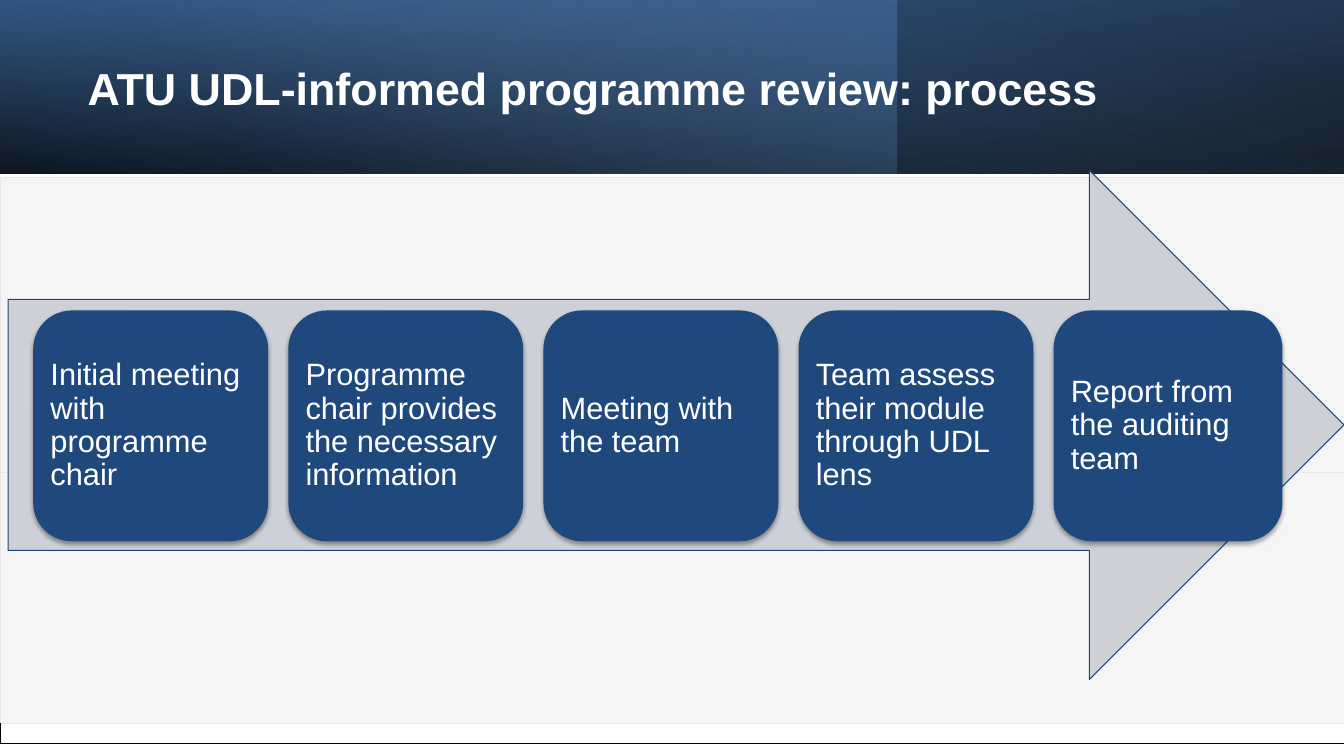
from dataclasses import dataclass

from lxml.etree import SubElement
from pptx import Presentation
from pptx.dml.color import RGBColor
from pptx.enum.shapes import MSO_SHAPE as Preset
from pptx.enum.text import MSO_ANCHOR as Anchor
from pptx.oxml import parse_xml
from pptx.oxml.ns import nsdecls, qn
from pptx.shapes.autoshape import Shape
from pptx.slide import Slide
from pptx.table import _Cell as Cell
from pptx.text.text import TextFrame
from pptx.util import Inches, Pt


@dataclass(frozen=True)
class Theme:
    font: str = "Arial"
    title_size: int = 32
    card_size: int = 22
    empty_cell_size: int = 8
    white: str = "FFFFFF"
    card: str = "1F497D"
    arrow: str = "CDD0D7"
    arrow_line: str = "1C477D"
    panel: str = "F5F5F5"
    panel_border: str = "E6E6E6"
    black: str = "000000"
    banner_blue: str = "376092"
    accent: str = "4F81BD"
    pale_accent: str = "95B3D7"


THEME = Theme()


@dataclass(frozen=True)
class Stop:
    position: int
    color: str
    opacity: int


@dataclass(frozen=True)
class BannerLayer:
    width: float
    angle: int
    stops: tuple[Stop, Stop]
    rotation: int = 0
    flipped: bool = False


@dataclass(frozen=True)
class Step:
    text: str
    width: float = 2.33


@dataclass(frozen=True)
class PanelRow:
    height: float
    fill: str | None
    borders: dict[str, str]


SLIDE_WIDTH, SLIDE_HEIGHT = 13.33, 7.5
BANNER_HEIGHT = 1.72
CARD_LEFT, CARD_TOP, CARD_HEIGHT, CARD_PITCH = 0.33, 3.08, 2.29, 2.53

BANNER = (
    BannerLayer(SLIDE_WIDTH, 100,
                (Stop(0, THEME.black, 96), Stop(100, THEME.banner_blue, 100)),
                rotation=180, flipped=True),
    BannerLayer(8.89, 140,
                (Stop(0, THEME.accent, 41), Stop(74, THEME.pale_accent, 0))),
    BannerLayer(SLIDE_WIDTH, 260,
                (Stop(0, THEME.black, 63), Stop(78, THEME.accent, 15)),
                flipped=True),
)

STEPS = (
    Step("Initial meeting with programme chair"),
    Step("Programme chair provides the necessary information"),
    Step("Meeting with the team"),
    Step("Team assess their module through UDL lens"),
    Step("Report from the auditing team", 2.27),
)

GREY_BORDERS = dict.fromkeys("LRTB", THEME.panel_border)
PANEL_ROWS = (
    PanelRow(2.93, THEME.panel, GREY_BORDERS),
    PanelRow(2.49, THEME.panel, GREY_BORDERS),
    PanelRow(0.2, None,
             dict.fromkeys("LRB", THEME.black) | {"T": THEME.panel_border}),
)


def rgb(color: str) -> RGBColor:
    return RGBColor.from_string(color)


def add_preset(slide: Slide, preset: Preset, left: float, top: float,
               width: float, height: float) -> Shape:
    """Add a shape with neither line nor shadow."""
    shape = slide.shapes.add_shape(
        preset, Inches(left), Inches(top), Inches(width), Inches(height))
    shape.shadow.inherit = False
    shape.line.fill.background()
    return shape


def write_text(frame: TextFrame, text: str, size: int, bold: bool = False) -> None:
    frame.word_wrap = True
    frame.vertical_anchor = Anchor.MIDDLE
    paragraph = frame.paragraphs[0]
    paragraph.alignment = 1
    paragraph.line_spacing = 0.9
    run = paragraph.add_run()
    run.text = text
    run.font.name = THEME.font
    run.font.size = Pt(size)
    run.font.bold = bold
    run.font.color.rgb = rgb(THEME.white)


def add_banner_layer(slide: Slide, layer: BannerLayer) -> None:
    shape = add_preset(slide, Preset.RECTANGLE, 0, 0, layer.width, BANNER_HEIGHT)
    shape.rotation = layer.rotation
    properties = shape._element.spPr
    if layer.flipped:
        properties.find(qn("a:xfrm")).set("flipH", "1")
    shape.fill.gradient()
    gradient = properties.find(qn("a:gradFill"))
    gradient.clear()
    gradient.set("rotWithShape", "1")
    stop_list = SubElement(gradient, qn("a:gsLst"))
    for stop in layer.stops:
        entry = SubElement(stop_list, qn("a:gs"), pos=str(stop.position * 1000))
        color = SubElement(entry, qn("a:srgbClr"), val=stop.color)
        SubElement(color, qn("a:alpha"), val=str(stop.opacity * 1000))
    SubElement(gradient, qn("a:lin"), ang=str(layer.angle * 60000), scaled="0")


def add_title(slide: Slide, text: str) -> None:
    box = slide.shapes.add_textbox(
        Inches(0.77), Inches(0.27), Inches(11.57), Inches(1.27))
    write_text(box.text_frame, text, THEME.title_size, bold=True)


def set_borders(cell: Cell, borders: dict[str, str]) -> None:
    properties = cell._tc.get_or_add_tcPr()
    sides = [side for side in "LRTB" if side in borders]
    for index, side in enumerate(sides):
        properties.insert(index, parse_xml(
            f'<a:ln{side} {nsdecls("a")} w="{Pt(0.75)}"><a:solidFill>'
            f'<a:srgbClr val="{borders[side]}"/></a:solidFill></a:ln{side}>'))


def add_panel(slide: Slide) -> None:
    height = sum(row.height for row in PANEL_ROWS)
    table = slide.shapes.add_table(
        len(PANEL_ROWS), 1, 0, Inches(1.76),
        Inches(SLIDE_WIDTH), Inches(height)).table
    table.first_row = table.horz_banding = False
    for index, row in enumerate(PANEL_ROWS):
        table.rows[index].height = Inches(row.height)
        cell = table.cell(index, 0)
        cell.margin_top = cell.margin_bottom = 0
        if row.fill:
            cell.fill.solid()
            cell.fill.fore_color.rgb = rgb(row.fill)
        else:
            cell.fill.background()
        set_borders(cell, row.borders)
        SubElement(cell.text_frame.paragraphs[0]._p, qn("a:endParaRPr"),
                   sz=str(THEME.empty_cell_size * 100))


def add_arrow(slide: Slide) -> None:
    arrow = add_preset(slide, Preset.RIGHT_ARROW, 0.08, 1.69, 13.25, 5.05)
    arrow.adjustments[0], arrow.adjustments[1] = 0.493, 0.5
    arrow.fill.solid()
    arrow.fill.fore_color.rgb = rgb(THEME.arrow)
    arrow.line.color.rgb = rgb(THEME.arrow_line)
    arrow.line.width = Pt(0.75)


def add_card(slide: Slide, index: int, step: Step) -> None:
    card = add_preset(slide, Preset.ROUNDED_RECTANGLE,
                      CARD_LEFT + index * CARD_PITCH, CARD_TOP,
                      step.width, CARD_HEIGHT)
    card.adjustments[0] = 1 / 6
    card.fill.solid()
    card.fill.fore_color.rgb = rgb(THEME.card)
    effects = card._element.spPr.find(qn("a:effectLst"))
    shadow = SubElement(effects, qn("a:outerShdw"), blurRad=str(Pt(3.1)),
                        dist=str(Pt(1.8)), dir="5400000", rotWithShape="0")
    color = SubElement(shadow, qn("a:srgbClr"), val=THEME.black)
    SubElement(color, qn("a:alpha"), val="35000")
    frame = card.text_frame
    frame.margin_left = frame.margin_right = Inches(0.06)
    frame.margin_top = frame.margin_bottom = Inches(0.06)
    write_text(frame, step.text, THEME.card_size)


def main() -> None:
    presentation = Presentation()
    presentation.slide_width = Inches(SLIDE_WIDTH)
    presentation.slide_height = Inches(SLIDE_HEIGHT)
    slide = presentation.slides.add_slide(presentation.slide_layouts[6])
    for layer in BANNER:
        add_banner_layer(slide, layer)
    add_title(slide, "ATU UDL-informed programme review: process")
    add_panel(slide)
    add_arrow(slide)
    for index, step in enumerate(STEPS):
        add_card(slide, index, step)
    presentation.save("out.pptx")


if __name__ == "__main__":
    main()
